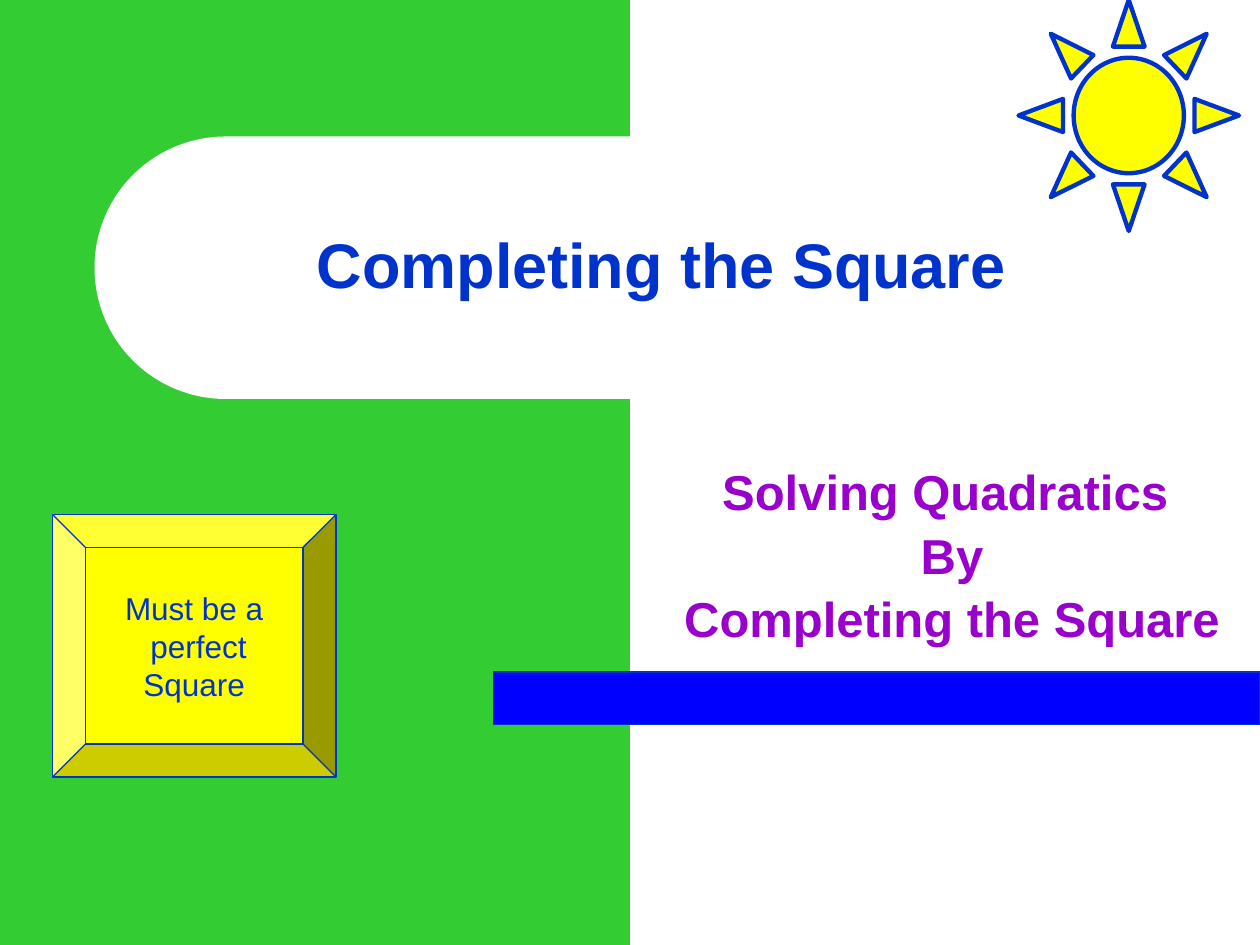
from dataclasses import dataclass

from pptx import Presentation
from pptx.dml.color import RGBColor as RGB
from pptx.enum.shapes import MSO_SHAPE as SHAPE
from pptx.enum.text import MSO_ANCHOR as ANCHOR, MSO_AUTO_SIZE as AUTO, PP_ALIGN as ALIGN
from pptx.util import Pt

# Content
TITLE = ["Completing the Square"]
SUBTITLE = ["Solving Quadratics ", "By", "Completing the Square"]
BUTTON = ["Must be a", " perfect", "Square"]


@dataclass(frozen=True)
class Theme:
    font: str = "Arial"
    green: str = "33CC33"
    white: str = "FFFFFF"
    blue: str = "0033CC"
    bar_blue: str = "0000FF"
    purple: str = "9900CC"
    yellow: str = "FFFF00"
    title_size: int = 36
    subtitle_size: int = 28
    button_size: int = 18


THEME = Theme()
WIDTH, HEIGHT = 720, 540

# Boxes: left, top, width, height in points
PANEL_BOX = (0, 0, WIDTH / 2, HEIGHT)
TITLE_BOX = (54, 78, 648, 150)
TAB_BOX = (54, 78, 408, 150)
SUBTITLE_BOX = (368, 216, 352, 158)
SUN_BOX = (582, 0, 126, 132)
BAR_BOX = (282, 384, 438, 30)
BUTTON_BOX = (30, 294, 162, 150)


def add_block(slide, kind, box, fill, line_width=None, adjustment=None):
    shape = slide.shapes.add_shape(kind, *map(Pt, box))
    shape.shadow.inherit = False
    shape.fill.solid()
    shape.fill.fore_color.rgb = RGB.from_string(fill)
    if line_width is None:
        shape.line.fill.background()
    else:
        shape.line.color.rgb = RGB.from_string(THEME.blue)
        shape.line.width = Pt(line_width)
    if adjustment is not None:
        shape.adjustments[0] = adjustment
    return shape


def write(shape, lines, size, color, bold=False, anchor=ANCHOR.MIDDLE,
          wrap=True, line_spacing=1.0, gap=0):
    frame = shape.text_frame
    frame.text = "\n".join(lines)
    frame.auto_size = AUTO.NONE
    frame.word_wrap = wrap
    frame.vertical_anchor = anchor
    for index, paragraph in enumerate(frame.paragraphs):
        paragraph.alignment = ALIGN.CENTER
        paragraph.line_spacing = line_spacing
        paragraph.space_before = Pt(gap if index else 0)
        for run in paragraph.runs:
            run.font.name = THEME.font
            run.font.size = Pt(size)
            run.font.bold = bold
            run.font.color.rgb = RGB.from_string(color)


def place(shape, box):
    shape.left, shape.top, shape.width, shape.height = map(Pt, box)


def main():
    presentation = Presentation()
    presentation.slide_width, presentation.slide_height = Pt(WIDTH), Pt(HEIGHT)
    slide = presentation.slides.add_slide(presentation.slide_layouts[0])
    title, subtitle = slide.placeholders

    # Green panel with its white tab, kept behind the title
    panel = add_block(slide, SHAPE.RECTANGLE, PANEL_BOX, THEME.green)
    tab = add_block(slide, SHAPE.ROUNDED_RECTANGLE, TAB_BOX, THEME.white, adjustment=0.5)
    for backdrop in (panel, tab):
        title.element.addprevious(backdrop.element)

    # Title and subtitle
    place(title, TITLE_BOX)
    write(title, TITLE, THEME.title_size, THEME.blue, bold=True, line_spacing=0.9)
    place(subtitle, SUBTITLE_BOX)
    write(subtitle, SUBTITLE, THEME.subtitle_size, THEME.purple, bold=True,
          anchor=ANCHOR.BOTTOM, line_spacing=0.9, gap=6)

    # Sun, bar and bevelled button
    add_block(slide, SHAPE.SUN, SUN_BOX, THEME.yellow, 2.5)
    add_block(slide, SHAPE.RECTANGLE, BAR_BOX, THEME.bar_blue, 0.75)
    button = add_block(slide, SHAPE.BEVEL, BUTTON_BOX, THEME.yellow, 0.75)
    write(button, BUTTON, THEME.button_size, THEME.blue, wrap=False)

    presentation.save("out.pptx")


if __name__ == "__main__":
    main()
